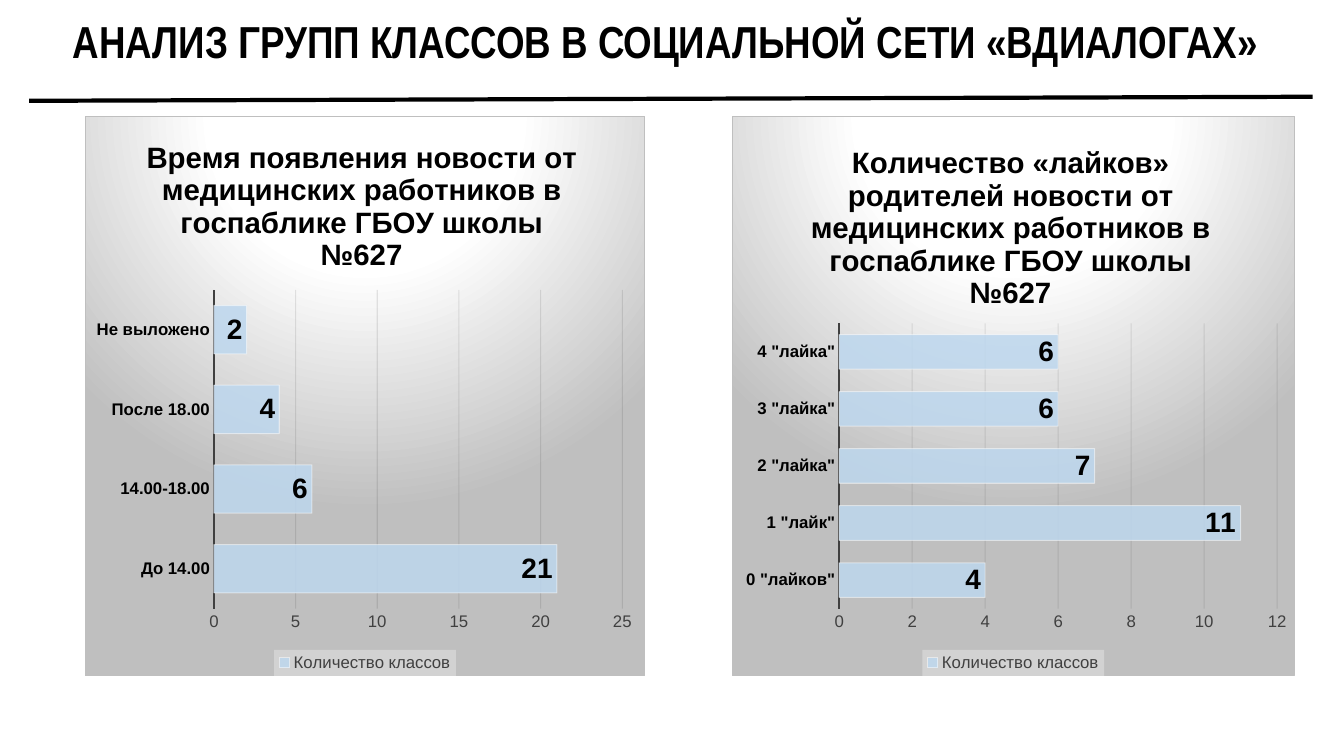
from dataclasses import dataclass

from pptx import Presentation
from pptx.chart.data import CategoryChartData
from pptx.dml.color import RGBColor
from pptx.enum.chart import XL_CHART_TYPE, XL_LABEL_POSITION, XL_LEGEND_POSITION, XL_TICK_MARK
from pptx.enum.shapes import MSO_CONNECTOR
from pptx.enum.text import MSO_ANCHOR, PP_ALIGN
from pptx.oxml import parse_xml
from pptx.oxml.ns import nsdecls, qn
from pptx.util import Emu, Pt

BAR = XL_CHART_TYPE.BAR_CLUSTERED
INSIDE_END = XL_LABEL_POSITION.INSIDE_END
BOTTOM = XL_LEGEND_POSITION.BOTTOM
NO_TICK = XL_TICK_MARK.NONE

EMU_PER_PX = 9144
COLORS = {
    "text": "000000", "axis": "404040", "grid": "0D0D0D", "bar": "BDD7EE",
    "light": "FFFFFF", "edge": "BFBFBF", "legend": "F2F2F2",
}
SERIES_NAME = "Количество классов"


@dataclass
class BarPanel:
    title: str
    left: int
    width: int
    values: dict[str, int]
    axis_max: int
    axis_step: int
    title_at: tuple[float, float]
    plot_box: tuple[float, float, float, float]


PANELS = [
    BarPanel(
        "Время появления новости от медицинских работников в госпаблике ГБОУ школы №627",
        84, 556,
        {"До 14.00": 21, "14.00-18.00": 6, "После 18.00": 4, "Не выложено": 2},
        25, 5, (0.1, 0.03), (0.23, 0.31, 0.73, 0.57),
    ),
    BarPanel(
        "Количество «лайков» родителей новости от медицинских работников в "
        "госпаблике ГБОУ школы №627",
        726, 558,
        {'0 "лайков"': 4, '1 "лайк"': 11, '2 "лайка"': 7, '3 "лайка"': 6, '4 "лайка"': 6},
        12, 2, (0.13, 0.04), (0.19, 0.37, 0.78, 0.51),
    ),
]


def px(n: int) -> Emu:
    return Emu(n * EMU_PER_PX)


def rgb(name: str) -> RGBColor:
    return RGBColor.from_string(COLORS[name])


def style_font(font, size: float, color: str, bold: bool = False, face: str = "Arial") -> None:
    font.name, font.size, font.bold = face, Pt(size), bold
    font.color.rgb = rgb(color)


def style_line(line, color: str, width: float) -> None:
    line.color.rgb = rgb(color)
    line.width = Pt(width)


def set_alpha(element, percent: int) -> None:
    """Make the first colour inside the element translucent."""
    color = next(element.iter(qn("a:srgbClr")))
    color.append(parse_xml(f'<a:alpha {nsdecls("a")} val="{percent * 1000}"/>'))


def set_layout(parent, index: int, box: tuple[float, ...], inner: bool = False) -> None:
    """Place a chart part by fractions of the chart: x, y and optionally w, h."""
    for old in parent.findall(qn("c:layout")):
        parent.remove(old)
    target = '<c:layoutTarget val="inner"/>' if inner else ""
    modes = "".join(f'<c:{k}Mode val="edge"/>' for k in "xy")
    sizes = "".join(f'<c:{k} val="{v}"/>' for k, v in zip("xywh", box))
    parent.insert(index, parse_xml(
        f'<c:layout {nsdecls("c")}><c:manualLayout>{target}{modes}{sizes}'
        '</c:manualLayout></c:layout>'))


def add_background(chart) -> None:
    stops = "".join(
        f'<a:gs pos="{pos * 1000}"><a:srgbClr val="{COLORS[c]}"/></a:gs>'
        for pos, c in ((0, "light"), (39, "light"), (100, "edge")))
    chart.element.find(qn("c:chart")).addnext(parse_xml(
        f'<c:spPr {nsdecls("c", "a")}><a:gradFill><a:gsLst>{stops}</a:gsLst>'
        '<a:path path="circle"><a:fillToRect l="50000" t="-80000" r="50000" b="180000"/>'
        f'</a:path></a:gradFill><a:ln w="{Pt(0.75)}"><a:solidFill>'
        f'<a:srgbClr val="{COLORS["edge"]}"/></a:solidFill></a:ln></c:spPr>'))


def style_axes(chart, panel: BarPanel) -> None:
    cat, val = chart.category_axis, chart.value_axis
    for axis in (cat, val):
        axis.major_tick_mark = axis.minor_tick_mark = NO_TICK
    style_font(cat.tick_labels.font, 12, "text", True)
    style_line(cat.format.line, "axis", 1.5)
    style_font(val.tick_labels.font, 12, "axis")
    val.format.line.fill.background()
    val.minimum_scale, val.maximum_scale = 0, panel.axis_max
    val.major_unit = panel.axis_step
    val.has_major_gridlines = True
    style_line(val.major_gridlines.format.line, "grid", 0.75)
    set_alpha(val.major_gridlines._xAx.find(qn("c:majorGridlines")), 10)


def style_bars(plot) -> None:
    plot.gap_width = 65
    plot.vary_by_categories = False
    series = plot.series[0]
    series.format.fill.solid()
    series.format.fill.fore_color.rgb = rgb("bar")
    style_line(series.format.line, "light", 0.75)
    sp_pr = series._element.find(qn("c:spPr"))
    set_alpha(sp_pr.find(qn("a:solidFill")), 85)
    set_alpha(sp_pr.find(qn("a:ln")), 50)
    labels = series.data_labels
    labels.show_value = True
    labels.position = INSIDE_END
    style_font(labels.font, 20, "text", True)


def add_legend(chart) -> None:
    chart.has_legend = True
    legend = chart.legend
    legend.position = BOTTOM
    legend.include_in_layout = False
    style_font(legend.font, 12, "axis")
    fill = parse_xml(
        f'<c:spPr {nsdecls("c", "a")}><a:solidFill><a:srgbClr val="{COLORS["legend"]}"/>'
        '</a:solidFill></c:spPr>')
    set_alpha(fill, 39)
    legend._element.find(qn("c:overlay")).addnext(fill)


def add_panel(s, panel: BarPanel) -> None:
    data = CategoryChartData()
    data.categories = list(panel.values)
    data.add_series(SERIES_NAME, list(panel.values.values()))
    chart = s.shapes.add_chart(
        BAR, px(panel.left), px(115), px(panel.width), px(556), data).chart
    style_font(chart.font, 10, "text")
    add_background(chart)
    chart.has_title = True
    p = chart.chart_title.text_frame.paragraphs[0]
    p.text = panel.title
    style_font(p.runs[0].font, 21, "text", True)
    set_layout(chart.chart_title._element, 1, panel.title_at)
    style_axes(chart, panel)
    style_bars(chart.plots[0])
    add_legend(chart)
    set_layout(chart.element.find(".//" + qn("c:plotArea")), 0, panel.plot_box, inner=True)


def add_heading(s) -> None:
    tf = s.shapes.add_textbox(0, 0, px(1321), px(87)).text_frame
    tf.word_wrap = True
    tf.vertical_anchor = MSO_ANCHOR.MIDDLE
    p = tf.paragraphs[0]
    p.text = "АНАЛИЗ ГРУПП КЛАССОВ В СОЦИАЛЬНОЙ СЕТИ «ВДИАЛОГАХ»"
    p.alignment, p.line_spacing = PP_ALIGN.CENTER, 0.9
    style_font(p.runs[0].font, 32, "text", True, "Arial Narrow")


def add_rule(s) -> None:
    rule = s.shapes.add_connector(MSO_CONNECTOR.STRAIGHT, px(29), px(100), px(1302), px(96))
    style_line(rule.line, "text", 3)
    rule._element.spPr.append(parse_xml(f'<a:effectLst {nsdecls("a")}/>'))


def main() -> None:
    prs = Presentation()
    prs.slide_width, prs.slide_height = px(1333), px(750)
    s = prs.slides.add_slide(prs.slide_layouts[6])
    add_heading(s)
    for panel in PANELS:
        add_panel(s, panel)
    add_rule(s)
    prs.save("out.pptx")


if __name__ == "__main__":
    main()
